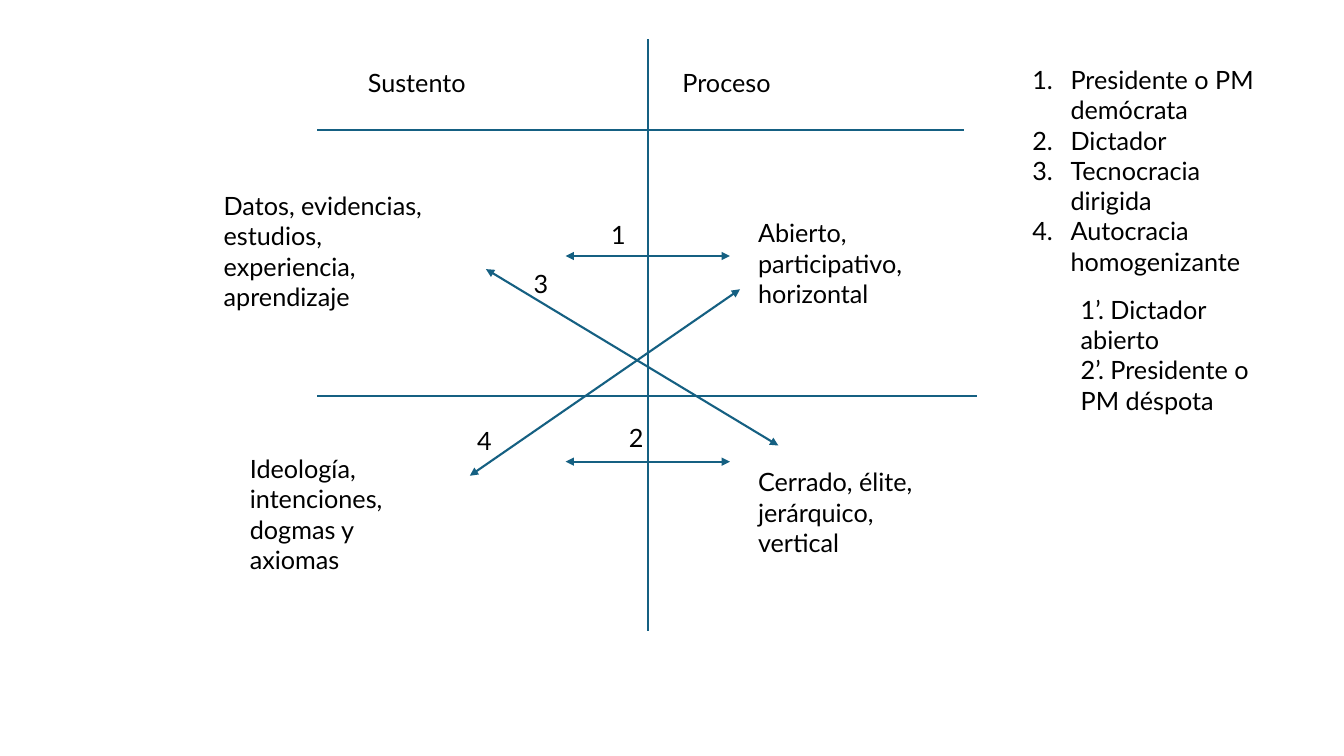
"""Build a slide crossing the basis of decisions with the process behind them."""
from dataclasses import dataclass

from lxml.etree import SubElement
from pptx import Presentation
from pptx.dml.color import RGBColor
from pptx.enum.shapes import MSO_CONNECTOR
from pptx.enum.text import MSO_AUTO_SIZE
from pptx.oxml.ns import qn
from pptx.slide import Slide
from pptx.util import Inches, Pt

TEAL = "156082"
BLACK = "000000"
AXIS_X = 6.43
GRID_LEFT = 3.14
HEADING_TOP = 0.62
PROCESS_LEFT = 7.42


@dataclass(frozen=True)
class Stroke:
    x1: float
    y1: float
    x2: float
    y2: float
    arrows: bool = False


@dataclass(frozen=True)
class Label:
    left: float
    top: float
    width: float
    height: float
    paragraphs: tuple[str, ...]
    numbered: bool = False


GRID = [
    Stroke(AXIS_X, 0.39, AXIS_X, 6.26),
    Stroke(9.56, 1.29, GRID_LEFT, 1.29),
    Stroke(9.69, 3.93, GRID_LEFT, 3.93),
]
RELATIONS = [
    Stroke(5.61, 4.58, 7.24, 4.58, arrows=True),
    Stroke(5.61, 2.54, 7.24, 2.54, arrows=True),
    Stroke(4.66, 4.72, 7.34, 2.87, arrows=True),
    Stroke(4.82, 2.67, 7.72, 4.42, arrows=True),
]
HEADINGS = [
    Label(3.55, HEADING_TOP, 2.11, 0.42, ("Sustento",)),
    Label(6.67, HEADING_TOP, 2.11, 0.42, ("Proceso",)),
]
QUADRANTS = [
    Label(2.12, 1.84, 2.49, 1.31, ("Datos, evidencias, estudios, experiencia, aprendizaje",)),
    Label(PROCESS_LEFT, 2.11, 2.49, 1.01, ("Abierto, participativo, horizontal",)),
    Label(2.38, 4.45, 2.07, 1.01, ("Ideología, intenciones, dogmas y axiomas",)),
    Label(PROCESS_LEFT, 4.58, 1.84, 1.01, ("Cerrado, élite, jerárquico, vertical",)),
]
LEGEND = [
    Label(10.14, 0.59, 2.47, 2.22,
          ("Presidente o PM demócrata", "Dictador", "Tecnocracia dirigida",
           "Autocracia homogenizante"), numbered=True),
    Label(10.62, 2.87, 2.05, 1.31,
          ("1’. Dictador abierto", "2’. Presidente o PM déspota")),
]
RELATION_NUMBERS = [
    Label(6.06, 2.13, 0.1, 0.4, ("1",)),
    Label(6.14, 4.14, 0.24, 0.4, ("2",)),
    Label(5.2, 2.61, 0.19, 0.4, ("3",)),
    Label(4.67, 4.17, 0.16, 0.4, ("4",)),
]


def color(value: str) -> RGBColor:
    return RGBColor.from_string(value)


def draw_stroke(slide: Slide, stroke: Stroke) -> None:
    connector = slide.shapes.add_connector(
        MSO_CONNECTOR.STRAIGHT, Inches(stroke.x1), Inches(stroke.y1),
        Inches(stroke.x2), Inches(stroke.y2))
    connector.line.color.rgb = color(TEAL)
    connector.line.width = Pt(1.5)
    properties = connector._element.spPr
    if stroke.arrows:
        outline = properties.find(qn("a:ln"))
        for end in ("a:headEnd", "a:tailEnd"):
            SubElement(outline, qn(end), type="triangle")
    SubElement(properties, qn("a:effectLst"))


def write_text(paragraph, text: str, *, size: float = 18, font: str = "Lato",
               fill: str = BLACK, numbered: bool = False) -> None:
    run = paragraph.add_run()
    run.text = text
    run.font.size = Pt(size)
    run.font.name = font
    run.font.color.rgb = color(fill)
    if numbered:
        properties = paragraph._p.get_or_add_pPr()
        indent = Inches(0.38)
        properties.set("marL", str(indent))
        properties.set("indent", str(-indent))
        SubElement(properties, qn("a:buFont"), typeface="+mj-lt")
        SubElement(properties, qn("a:buAutoNum"), type="arabicPeriod")


def draw_label(slide: Slide, label: Label) -> None:
    frame = slide.shapes.add_textbox(
        Inches(label.left), Inches(label.top),
        Inches(label.width), Inches(label.height)).text_frame
    frame.word_wrap = True
    frame.auto_size = MSO_AUTO_SIZE.SHAPE_TO_FIT_TEXT
    for index, text in enumerate(label.paragraphs):
        paragraph = frame.add_paragraph() if index else frame.paragraphs[0]
        write_text(paragraph, text, numbered=label.numbered)


def main() -> None:
    presentation = Presentation()
    presentation.slide_width = Inches(13.33)
    presentation.slide_height = Inches(7.5)
    slide = presentation.slides.add_slide(presentation.slide_layouts[6])
    for stroke in GRID + RELATIONS:
        draw_stroke(slide, stroke)
    for label in HEADINGS + QUADRANTS + LEGEND + RELATION_NUMBERS:
        draw_label(slide, label)
    presentation.save("out.pptx")


if __name__ == "__main__":
    main()
